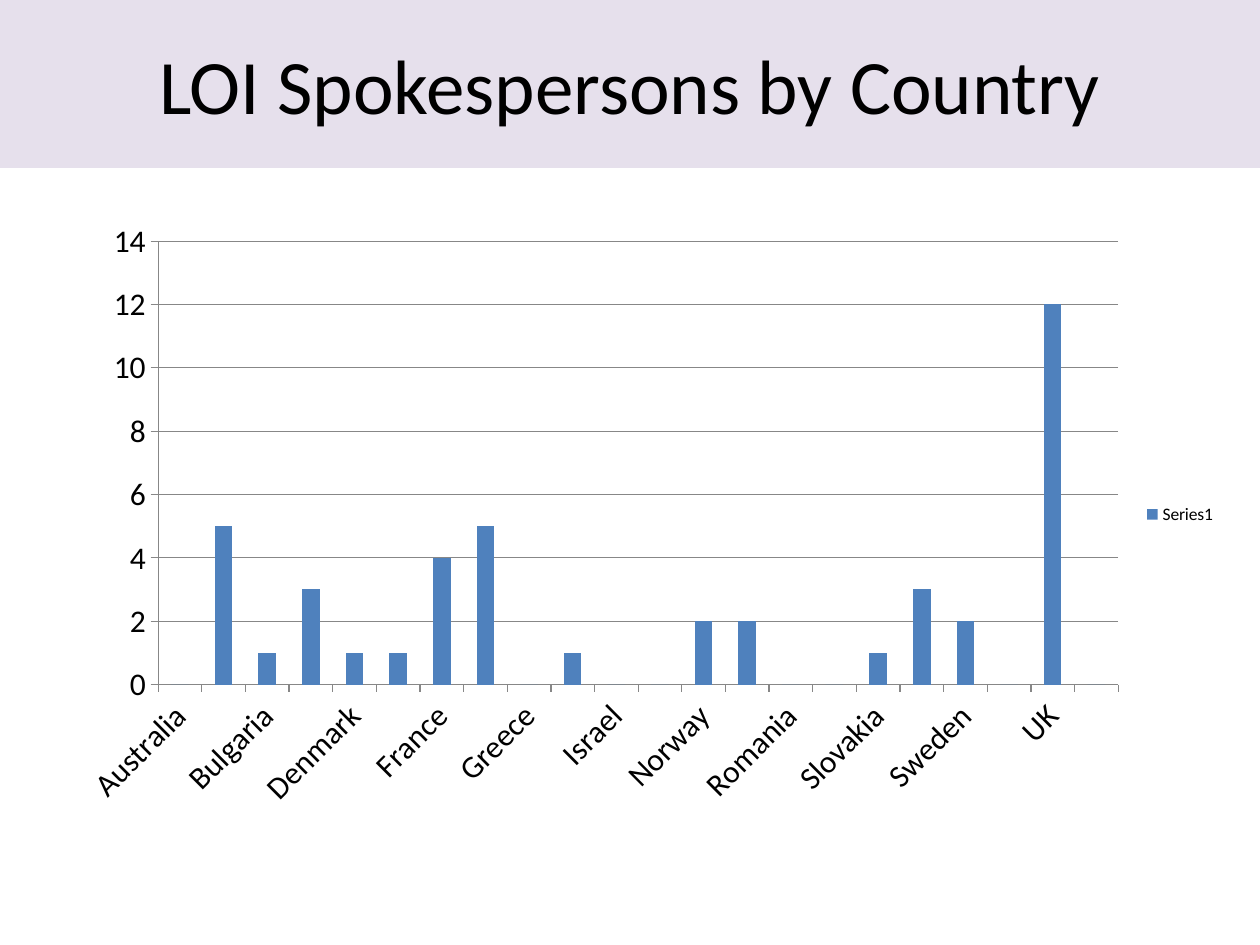
from pptx import Presentation
from pptx.chart.data import CategoryChartData
from pptx.dml.color import RGBColor
from pptx.enum.chart import XL_CHART_TYPE, XL_LEGEND_POSITION, XL_TICK_MARK
from pptx.enum.shapes import MSO_SHAPE
from pptx.enum.text import MSO_ANCHOR, PP_ALIGN
from pptx.util import Emu, Pt

PX_PER_INCH = 126
FONT = "Calibri"
BLACK = "000000"
GRAY = "878787"
SPOKESPERSONS = {
    "Australia": 0, "Belgium": 5, "Bulgaria": 1, "CERN": 3, "Denmark": 1,
    "Finland": 1, "France": 4, "Germany": 5, "Greece": 0, "Holland": 1,
    "Israel": 0, "Italy": 0, "Norway": 2, "Poland": 2, "Romania": 0,
    "South Africa": 0, "Slovakia": 1, "Spain": 3, "Sweden": 2,
    "Switzerland": 0, "UK": 12, "USA": 0,
}


def px(length):
    """Turn pixels into EMU."""
    return Emu(round(length * 914400 / PX_PER_INCH))


def color(value):
    """Turn a hex string into a colour."""
    return RGBColor.from_string(value)


def style_font(font, size):
    """Set the slide's typeface, text colour and a size in points."""
    font.name = FONT
    font.size = Pt(size)
    font.bold = False
    font.color.rgb = color(BLACK)


def add_title_band(slide, text, left, top, width, height):
    """Add the tinted band that holds the centred title."""
    shape = slide.shapes.add_shape(
        MSO_SHAPE.RECTANGLE, px(left), px(top), px(width), px(height))
    shape.shadow.inherit = False
    shape.fill.solid()
    shape.fill.fore_color.rgb = color("E6E0EC")
    shape.line.fill.background()
    frame = shape.text_frame
    frame.word_wrap = True
    frame.vertical_anchor = MSO_ANCHOR.MIDDLE
    frame.text = text
    paragraph = frame.paragraphs[0]
    paragraph.alignment = PP_ALIGN.CENTER
    style_font(paragraph.font, 44)


def style_axis(axis):
    """Give an axis its outer ticks, gray line and label font."""
    axis.major_tick_mark = XL_TICK_MARK.OUTSIDE
    axis.minor_tick_mark = XL_TICK_MARK.NONE
    axis.format.line.color.rgb = color(GRAY)
    axis.format.line.width = Pt(0.75)
    style_font(axis.tick_labels.font, 18)


def add_country_chart(slide, values, left, top, width, height):
    """Add the column chart of spokespersons by country."""
    data = CategoryChartData()
    data.categories = list(values)
    data.add_series("Series1", list(values.values()))
    chart = slide.shapes.add_chart(
        XL_CHART_TYPE.COLUMN_CLUSTERED,
        px(left), px(top), px(width), px(height), data).chart
    style_font(chart.font, 10)
    chart.has_title = False
    chart.has_legend = True
    chart.legend.position = XL_LEGEND_POSITION.RIGHT
    chart.legend.include_in_layout = False
    style_axis(chart.category_axis)
    style_axis(chart.value_axis)
    value_axis = chart.value_axis
    value_axis.minimum_scale, value_axis.maximum_scale = 0, 14
    value_axis.major_unit = 2
    value_axis.has_major_gridlines = True
    gridline = value_axis.major_gridlines.format.line
    gridline.color.rgb = color(GRAY)
    gridline.width = Pt(0.75)
    plot = chart.plots[0]
    plot.gap_width = 150
    plot.vary_by_categories = False
    fill = plot.series[0].format.fill
    fill.solid()
    fill.fore_color.rgb = color("4F81BD")


def main():
    """Build and save the slide."""
    presentation = Presentation()
    presentation.slide_width = px(1260)
    presentation.slide_height = px(945)
    slide = presentation.slides.add_slide(presentation.slide_layouts[6])
    add_title_band(slide, "LOI Spokespersons by Country", 0, 0, 1260, 168)
    add_country_chart(slide, SPOKESPERSONS, 63, 210, 1166, 609)
    presentation.save("out.pptx")


if __name__ == "__main__":
    main()
